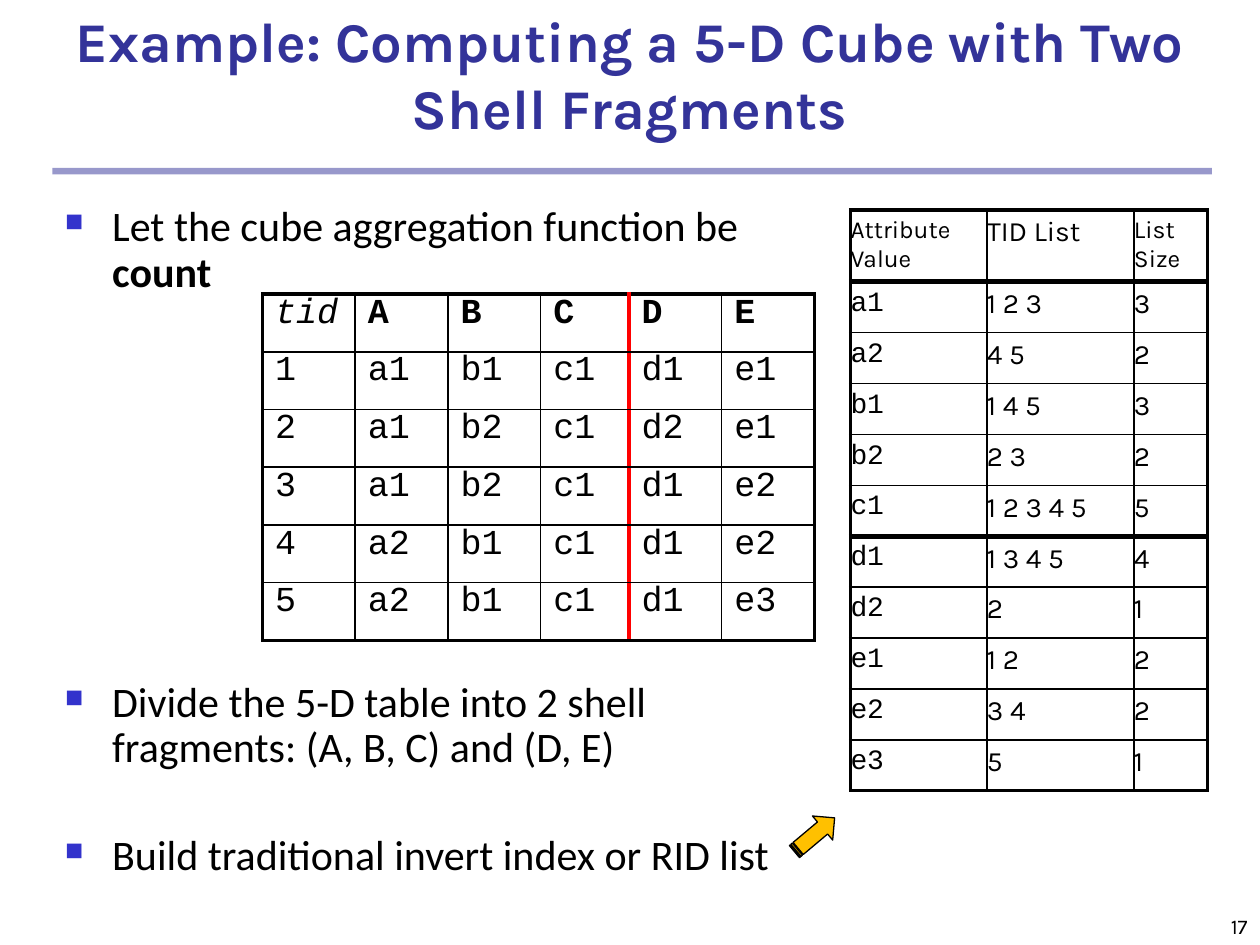
from dataclasses import dataclass

from lxml import etree
from pptx import Presentation
from pptx.dml.color import RGBColor
from pptx.enum.shapes import MSO_SHAPE
from pptx.enum.text import MSO_ANCHOR, PP_ALIGN
from pptx.oxml.ns import qn
from pptx.util import Pt

RECT = MSO_SHAPE.RECTANGLE
STRIPED_ARROW = MSO_SHAPE.STRIPED_RIGHT_ARROW
TOP, BOTTOM = MSO_ANCHOR.TOP, MSO_ANCHOR.BOTTOM
LEFT, CENTER, RIGHT = PP_ALIGN.LEFT, PP_ALIGN.CENTER, PP_ALIGN.RIGHT

COLORS = {
    "title": "333399",
    "bullet": "3333CC",
    "text": "000000",
    "border": "000000",
    "split": "FF0000",
    "arrow": "FFC000",
}
THIN, OUTER, THICK = 1, 2.25, 3

TITLE = {"name": "Karla", "size": Pt(32), "bold": True}
BODY = {"name": "Calibri", "size": Pt(24)}
NUMBER = {"name": "Karla", "size": Pt(12)}
CODE = {"name": "Courier New", "size": Pt(20)}
SMALL_CODE = {"name": "Courier New", "size": Pt(16)}
LIST = {"name": "Karla", "size": Pt(16)}
SMALL = {"name": "Karla", "size": Pt(14)}


@dataclass
class Box:
    x: float
    y: float
    w: float
    h: float

    def emu(self) -> tuple:
        return Pt(self.x), Pt(self.y), Pt(self.w), Pt(self.h)


@dataclass
class Bullet:
    runs: list
    before: float = 0


@dataclass
class Grid:
    x: float
    y: float
    cols: list
    rows: list
    cells: list
    head: list
    body: list
    margins: dict
    row_rules: dict
    col_rules: dict


def add_run(p, text: str, fmt: dict, color: str = "text") -> None:
    r = p.add_run()
    r.text = text
    for name, value in fmt.items():
        setattr(r.font, name, value)
    r.font.color.rgb = RGBColor.from_string(COLORS[color])


def add_text_frame(slide, box: Box, anchor):
    tf = slide.shapes.add_textbox(*box.emu()).text_frame
    tf.word_wrap = True
    tf.vertical_anchor = anchor
    return tf


def add_label(slide, box: Box, text: str, fmt: dict, align, color: str = "text") -> None:
    p = add_text_frame(slide, box, BOTTOM).paragraphs[0]
    p.alignment = align
    add_run(p, text, fmt, color)


def add_bullets(slide, box: Box, bullets: list[Bullet]) -> None:
    tf = add_text_frame(slide, box, TOP)
    for i, bullet in enumerate(bullets):
        p = tf.add_paragraph() if i else tf.paragraphs[0]
        p.alignment = LEFT
        p.line_spacing = 0.9
        p.space_before = Pt(bullet.before)
        pPr = p._p.get_or_add_pPr()
        pPr.set("marL", str(Pt(27)))
        pPr.set("indent", str(-Pt(27)))
        clr = etree.SubElement(pPr, qn("a:buClr"))
        etree.SubElement(clr, qn("a:srgbClr"), val=COLORS["bullet"])
        etree.SubElement(pPr, qn("a:buSzPct"), val="60000")
        etree.SubElement(pPr, qn("a:buChar"), char="■")
        for text, bold in bullet.runs:
            add_run(p, text, {**BODY, "bold": bold})


def set_border(tcPr, index: int, side: str, rule: tuple) -> None:
    width, color = rule
    ln = etree.Element(qn(f"a:ln{side}"), w=str(Pt(width)))
    fill = etree.SubElement(ln, qn("a:solidFill"))
    etree.SubElement(fill, qn("a:srgbClr"), val=COLORS[color])
    tcPr.insert(index, ln)


def add_grid(slide, grid: Grid) -> None:
    n_rows, n_cols = len(grid.rows), len(grid.cols)
    box = Box(grid.x, grid.y, sum(grid.cols), sum(grid.rows))
    table = slide.shapes.add_table(n_rows, n_cols, *box.emu()).table
    table.first_row = table.horz_banding = False
    for col, width in zip(table.columns, grid.cols):
        col.width = Pt(width)
    for row, height in zip(table.rows, grid.rows):
        row.height = Pt(height)
    edge, inner = (OUTER, "border"), (THIN, "border")
    row_rules = {0: edge, n_rows: edge, **grid.row_rules}
    col_rules = {0: edge, n_cols: edge, **grid.col_rules}
    for i, values in enumerate(grid.cells):
        for j, value in enumerate(values):
            cell = table.cell(i, j)
            for name, margin in grid.margins.items():
                setattr(cell, name, margin)
            cell.fill.background()
            fmt = (grid.body if i else grid.head)[j]
            add_run(cell.text_frame.paragraphs[0], value, fmt)
            sides = {
                "L": col_rules.get(j, inner),
                "R": col_rules.get(j + 1, inner),
                "T": row_rules.get(i, inner),
                "B": row_rules.get(i + 1, inner),
            }
            for k, (side, rule) in enumerate(sides.items()):
                set_border(cell._tc.get_or_add_tcPr(), k, side, rule)


def add_shape(slide, kind, box: Box, color: str):
    sp = slide.shapes.add_shape(kind, *box.emu())
    sp.shadow.inherit = False
    sp.fill.solid()
    sp.fill.fore_color.rgb = RGBColor.from_string(COLORS[color])
    sp.line.fill.background()
    return sp


def margins(x: float, y: float) -> dict:
    return {"margin_left": Pt(x), "margin_right": Pt(x),
            "margin_top": Pt(y), "margin_bottom": Pt(y)}


CUBE = Grid(
    150, 168, [53, 53, 53, 50.5, 53, 53], [33] * 6,
    [line.split() for line in (
        "tid A B C D E", "1 a1 b1 c1 d1 e1", "2 a1 b2 c1 d2 e1",
        "3 a1 b2 c1 d1 e2", "4 a2 b1 c1 d1 e2", "5 a2 b1 c1 d1 e3")],
    [{**CODE, "italic": True}] + [{**CODE, "bold": True}] * 5, [CODE] * 6,
    margins(7.2, 0), {}, {4: (THICK, "split")})

TID_LISTS = {
    "a1": "1 2 3", "a2": "4 5", "b1": "1 4 5", "b2": "2 3", "c1": "1 2 3 4 5",
    "d1": "1 3 4 5", "d2": "2", "e1": "1 2", "e2": "3 4", "e3": "5",
}
INDEX = Grid(
    486, 120, [78, 84, 42], [41] + [29.1] * 10,
    [["Attribute Value", "TID List", "List Size"]]
    + [[key, tids, str(len(tids.split()))] for key, tids in TID_LISTS.items()],
    [SMALL, LIST, SMALL], [SMALL_CODE, LIST, LIST],
    margins(0, 3.6), {n: (THICK, "border") for n in (1, 6)}, {})

BULLETS = [
    Bullet([("Let the cube aggregation function be ", False), ("count", True)]),
    Bullet([("Divide the 5-D table into 2 shell fragments: (A, B, C) and (D, E)", False)], 220),
    Bullet([("Build traditional invert index or RID list", False)], 35.5),
]


def main() -> None:
    prs = Presentation()
    prs.slide_width, prs.slide_height = Pt(720), Pt(540)
    s = prs.slides.add_slide(prs.slide_layouts[6])
    bar = add_shape(s, RECT, Box(30, 96, 662.5, 3.75), "title")
    clr = bar.fill._xPr.find(qn("a:solidFill"))[0]
    etree.SubElement(clr, qn("a:alpha"), val="50000")
    add_label(s, Box(570, 504, 150, 36), "17", NUMBER, RIGHT)
    add_label(s, Box(0, 30, 720, 54),
              "Example: Computing a 5-D Cube with Two Shell Fragments", TITLE, CENTER, "title")
    add_bullets(s, Box(30, 114, 456, 396), BULLETS)
    for grid in (CUBE, INDEX):
        add_grid(s, grid)
    arrow = add_shape(s, STRIPED_ARROW, Box(450.5, 468, 30, 18), "arrow")
    arrow.rotation = 320
    arrow.line.color.rgb = RGBColor.from_string(COLORS["border"])
    arrow.line.width = Pt(0.75)
    prs.save("out.pptx")


if __name__ == "__main__":
    main()
